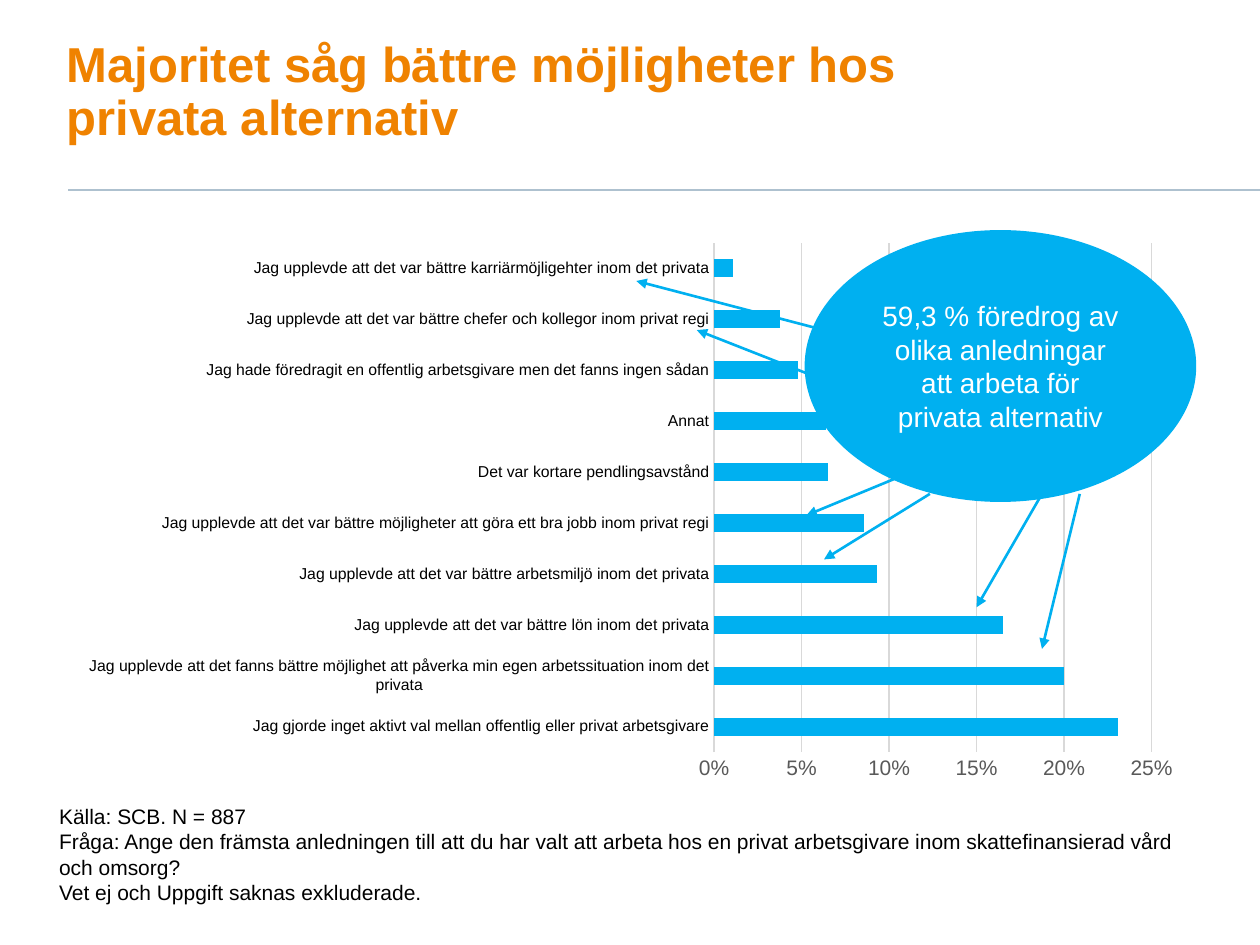
"""Build a slide with a bar chart of reasons for choosing a private employer."""
from lxml import etree
from pptx import Presentation
from pptx.chart.data import CategoryChartData
from pptx.dml.color import RGBColor
from pptx.enum import chart as ch, shapes, text
from pptx.oxml import parse_xml
from pptx.oxml.ns import nsdecls, qn
from pptx.util import Inches, Pt

BLUE, GRID = "00B0F0", "D9D9D9"


def style(font, size, color, bold=False):
    font.name, font.size, font.bold = "Arial", Pt(size), bold
    font.color.rgb = RGBColor.from_string(color)


def add_line(x1, y1, x2, y2, color, width, arrow=False):
    c = s.shapes.add_connector(shapes.MSO_CONNECTOR.STRAIGHT,
                               Inches(x1), Inches(y1), Inches(x2), Inches(y2))
    c.line.color.rgb = RGBColor.from_string(color)
    c.line.width = Pt(width)
    if arrow:
        etree.SubElement(c.line._get_or_add_ln(), qn("a:tailEnd"), type="triangle")
    etree.SubElement(c._element.spPr, qn("a:effectLst"))


prs = Presentation()
prs.slide_width, prs.slide_height = Inches(10), Inches(7.5)
s = prs.slides.add_slide(prs.slide_layouts[6])

add_line(0.54, 1.51, 10, 1.51, "AEC1CF", 1)

title = s.shapes.add_textbox(Inches(0.53), Inches(0.31), Inches(7.16), Inches(0.9))
tf = title.text_frame
tf.word_wrap = True
tf.vertical_anchor = text.MSO_ANCHOR.BOTTOM
tf.margin_left = tf.margin_top = 0
p = tf.paragraphs[0]
p.text = "Majoritet såg bättre möjligheter hos privata alternativ"
p.line_spacing = 0.9
style(p.font, 28, "EF8200", True)

reasons = [
    ("Jag gjorde inget aktivt val mellan offentlig eller privat arbetsgivare", 0.231),
    ("Jag upplevde att det fanns bättre möjlighet att påverka min egen "
     "arbetssituation inom det privata", 0.2),
    ("Jag upplevde att det var bättre lön inom det privata", 0.165),
    ("Jag upplevde att det var bättre arbetsmiljö inom det privata", 0.093),
    ("Jag upplevde att det var bättre möjligheter att göra ett bra jobb inom privat regi", 0.086),
    ("Det var kortare pendlingsavstånd", 0.065),
    ("Annat", 0.064),
    ("Jag hade föredragit en offentlig arbetsgivare men det fanns ingen sådan", 0.048),
    ("Jag upplevde att det var bättre chefer och kollegor inom privat regi", 0.038),
    ("Jag upplevde att det var bättre karriärmöjligehter inom det privata", 0.011),
]
data = CategoryChartData(number_format="0%")
data.categories = [reason for reason, share in reasons]
data.add_series("Series 1", [share for reason, share in reasons])
chart = s.shapes.add_chart(ch.XL_CHART_TYPE.BAR_CLUSTERED, Inches(0.53), Inches(1.84),
                           Inches(8.95), Inches(4.44), data).chart
chart.has_legend = chart.has_title = False
style(chart.font, 10, "000000")
plot = chart.plots[0]
plot.gap_width = 182
plot.vary_by_categories = False
fill = plot.series[0].format.fill
fill.solid()
fill.fore_color.rgb = RGBColor.from_string(BLUE)

cat, val = chart.category_axis, chart.value_axis
for axis, size, color in ((cat, 9, "000000"), (val, 12, "595959")):
    style(axis.tick_labels.font, size, color)
    axis.major_tick_mark = axis.minor_tick_mark = ch.XL_TICK_MARK.NONE
val.minimum_scale, val.maximum_scale, val.major_unit = 0, 0.25, 0.05
val.tick_labels.number_format = "0%"
val.tick_labels.number_format_is_linked = False
val.format.line.fill.background()
for line in (cat.format.line, val.major_gridlines.format.line):
    line.color.rgb = RGBColor.from_string(GRID)
    line.width = Pt(0.75)

area = chart._chartSpace.chart.plotArea
for old in area.findall(qn("c:layout")):
    area.remove(old)
area.insert(0, parse_xml(
    f'<c:layout {nsdecls("c")}><c:manualLayout><c:layoutTarget val="inner"/>'
    '<c:xMode val="edge"/><c:yMode val="edge"/><c:x val="0.574"/><c:y val="0.02"/>'
    '<c:w val="0.388"/><c:h val="0.91"/></c:manualLayout></c:layout>'))

sp = s.shapes.add_shape(shapes.MSO_SHAPE.OVAL, Inches(6.4), Inches(1.84),
                        Inches(3.08), Inches(2.13))
sp.shadow.inherit = False
sp.fill.solid()
sp.fill.fore_color.rgb = sp.line.color.rgb = RGBColor.from_string(BLUE)
sp.line.width = Pt(2)
tf = sp.text_frame
tf.word_wrap = True
tf.vertical_anchor = text.MSO_ANCHOR.MIDDLE
p = tf.paragraphs[0]
p.text = "59,3 % föredrog av olika anledningar att arbeta för privata alternativ"
p.alignment = text.PP_ALIGN.CENTER
style(p.font, 16, "FFFFFF")

for ends in ((8.57, 3.92, 8.27, 5.15), (8.27, 3.92, 7.75, 4.82), (7.38, 3.92, 6.54, 4.44),
             (7.27, 3.73, 6.4, 4.09), (6.42, 2.97, 5.53, 2.62), (6.54, 2.62, 5.05, 2.23)):
    add_line(*ends, BLUE, 1.5, arrow=True)

notes = ["Källa: SCB. N = 887",
         "Fråga: Ange den främsta anledningen till att du har valt att arbeta hos en privat "
         "arbetsgivare inom skattefinansierad vård och omsorg?",
         "Vet ej och Uppgift saknas exkluderade."]
source = s.shapes.add_textbox(Inches(0.37), Inches(6.33), Inches(9.11), Inches(0.91))
tf = source.text_frame
tf.word_wrap = True
tf.auto_size = text.MSO_AUTO_SIZE.SHAPE_TO_FIT_TEXT
for i, note in enumerate(notes):
    p = tf.add_paragraph() if i else tf.paragraphs[0]
    p.text = note
    style(p.font, 12, "000000")

prs.save("out.pptx")
